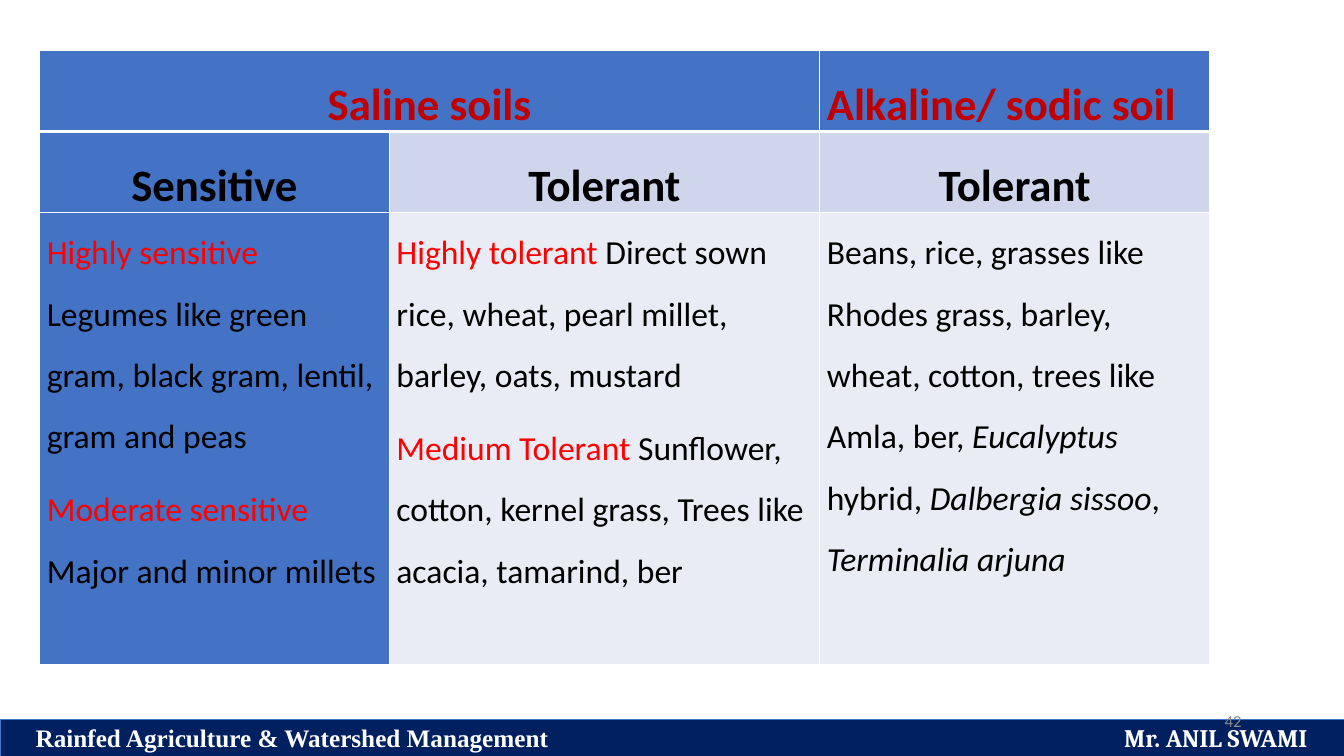
from lxml import etree
from pptx import Presentation
from pptx.dml.color import RGBColor
from pptx.enum.shapes import MSO_SHAPE
from pptx.enum.text import MSO_ANCHOR, PP_ALIGN
from pptx.oxml.ns import qn
from pptx.util import Cm, Pt

RECT = MSO_SHAPE.RECTANGLE
MIDDLE = MSO_ANCHOR.MIDDLE
LEFT, CENTER, RIGHT = PP_ALIGN.LEFT, PP_ALIGN.CENTER, PP_ALIGN.RIGHT

COLORS = {
    "navy": "002060", "blue": "4472C4", "band": "CFD5EA", "pale": "E9EBF5",
    "white": "FFFFFF", "black": "000000", "red": "FF0000", "dark": "C00000",
    "gray": "8C8C8C",
}

COLS = [8.81, 10.85, 9.83]
ROWS = [1.93, 1.93, 11.4]

HEADS = [
    [("Saline soils", CENTER), None, ("Alkaline/ sodic soil", LEFT)],
    [("Sensitive", CENTER), ("Tolerant", CENTER), ("Tolerant", CENTER)],
]
HEAD_INKS = ["dark", "black"]
FILLS = [
    ["blue", "blue", "blue"],
    ["blue", "band", "band"],
    ["blue", "pale", "pale"],
]

CROPS = [
    [
        [("Highly sensitive ", "red", False),
         ("Legumes like green gram, black gram, lentil, gram and peas", "black", False)],
        [("Moderate sensitive ", "red", False),
         ("Major and minor millets", "black", False)],
    ],
    [
        [("Highly tolerant ", "red", False),
         ("Direct sown rice, wheat, pearl millet, barley, oats, mustard", "black", False)],
        [("Medium Tolerant ", "red", False),
         ("Sunflower, cotton, kernel grass, Trees like acacia, tamarind, ber", "black", False)],
    ],
    [
        [("Beans, rice, grasses like Rhodes grass, barley, wheat, cotton, "
          "trees like Amla, ber, ", "black", False),
         ("Eucalyptus", "black", True),
         (" hybrid, ", "black", False),
         ("Dalbergia sissoo", "black", True),
         (", ", "black", False),
         ("Terminalia arjuna", "black", True)],
    ],
]


def ink(name):
    return RGBColor.from_string(COLORS[name])


def style(font, size, color, bold=False, face=None):
    font.size = Pt(size)
    font.bold = bold
    font.color.rgb = ink(color)
    if face:
        font.name = face


def add_footer(slide, left, top, width, height):
    bar = slide.shapes.add_shape(RECT, left, top, width, height)
    bar.shadow.inherit = False
    bar.fill.solid()
    bar.fill.fore_color.rgb = ink("navy")
    bar.line.color.rgb = ink("blue")
    bar.line.width = Pt(0.5)
    frame = bar.text_frame
    frame.vertical_anchor = MIDDLE
    frame.margin_left = Cm(0.9)
    frame.margin_right = 0
    para = frame.paragraphs[0]
    para.alignment = LEFT
    tabs = etree.SubElement(para._p.get_or_add_pPr(), qn("a:tabLst"))
    etree.SubElement(tabs, qn("a:tab"), pos=str(width - Cm(1.82)), algn="r")
    style(para.font, 18, "white", True)
    for text, face in [("Rainfed Agriculture & Watershed Management", "Times New Roman"),
                       ("\tMr. ANIL SWAMI", "Cambria")]:
        run = para.add_run()
        run.text = text
        style(run.font, 18, "white", True, face)


def add_number(slide, left, top, width, height):
    frame = slide.shapes.add_textbox(left, top, width, height).text_frame
    frame.word_wrap = True
    frame.vertical_anchor = MIDDLE
    para = frame.paragraphs[0]
    para.text = "42"
    para.alignment = RIGHT
    style(para.font, 12, "gray", face="Calibri")


def set_cell(cell, fill, base):
    cell.margin_left = cell.margin_right = Cm(0.18)
    cell.margin_top = cell.margin_bottom = 0
    props = cell._tc.get_or_add_tcPr()
    for side, width in [("L", 1), ("R", 1), ("T", 1), ("B", base)]:
        line = etree.SubElement(props, qn(f"a:ln{side}"), w=str(Pt(width)))
        paint = etree.SubElement(line, qn("a:solidFill"))
        etree.SubElement(paint, qn("a:srgbClr"), val=COLORS["white"])
    cell.fill.solid()
    cell.fill.fore_color.rgb = ink(fill)


def space(para, align):
    para.alignment = align
    para.line_spacing = 1.5
    para.space_after = Pt(8)


def fill_head(cell, text, align, color):
    para = cell.text_frame.paragraphs[0]
    para.text = text
    space(para, align)
    style(para.font, 32, color, True, "Calibri")


def fill_crops(cell, paras):
    frame = cell.text_frame
    for i, parts in enumerate(paras):
        para = frame.add_paragraph() if i else frame.paragraphs[0]
        space(para, LEFT)
        style(para.font, 24, "black", face="Calibri")
        for text, color, slant in parts:
            run = para.add_run()
            run.text = text
            run.font.color.rgb = ink(color)
            run.font.italic = slant


def add_crops(slide, left, top, width, height):
    table = slide.shapes.add_table(len(ROWS), len(COLS), left, top, width, height).table
    table.first_row = table.horz_banding = False
    for col, size in zip(table.columns, COLS):
        col.width = int(width * size / sum(COLS))
    for row, size in zip(table.rows, ROWS):
        row.height = int(height * size / sum(ROWS))
    for r, fills in enumerate(FILLS):
        for c, fill in enumerate(fills):
            set_cell(table.cell(r, c), fill, 1 if r else 3)
    table.cell(0, 0).merge(table.cell(0, 1))
    for r, heads in enumerate(HEADS):
        for c, head in enumerate(heads):
            if head:
                fill_head(table.cell(r, c), *head, HEAD_INKS[r])
    for c, paras in enumerate(CROPS):
        fill_crops(table.cell(2, c), paras)


def main():
    deck = Presentation()
    deck.slide_width, deck.slide_height = Cm(33.87), Cm(19.05)
    slide = deck.slides.add_slide(deck.slide_layouts[6])
    add_footer(slide, 0, Cm(18.13), deck.slide_width, Cm(0.92))
    add_number(slide, Cm(23.92), Cm(17.66), Cm(7.62), Cm(1.01))
    add_crops(slide, Cm(1), Cm(1.28), Cm(sum(COLS)), Cm(sum(ROWS)))
    deck.save("out.pptx")


if __name__ == "__main__":
    main()
